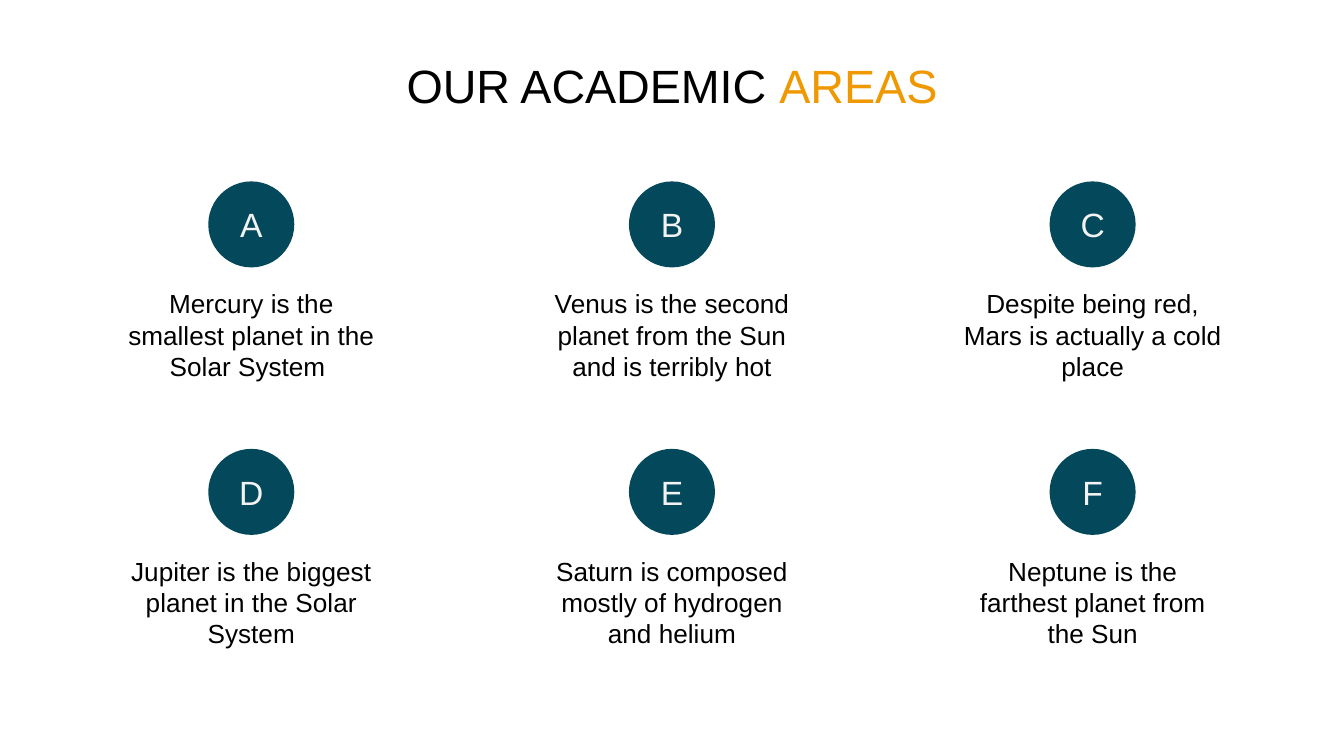
from dataclasses import dataclass

from pptx import Presentation
from pptx.dml.color import RGBColor
from pptx.enum.shapes import MSO_SHAPE as Shape
from pptx.enum.text import MSO_ANCHOR as Anchor, PP_ALIGN as Align
from pptx.util import Inches, Pt


@dataclass(frozen=True)
class Theme:
    font: str = "Arial"
    background: str = "FFFFFF"
    text: str = "000000"
    accent: str = "F09800"
    circle: str = "03485B"
    letter: str = "F3F3F3"
    title_size: int = 25
    letter_size: int = 18
    body_size: int = 14


THEME = Theme()

AREAS = [
    ("A", "Mercury is the smallest planet in the Solar System "),
    ("B", "Venus is the second planet from the Sun and is terribly hot"),
    ("C", "Despite being red, Mars is actually a cold place"),
    ("D", "Jupiter is the biggest planet in the Solar System"),
    ("E", "Saturn is composed mostly of hydrogen and helium"),
    ("F", "Neptune is the farthest planet from the Sun"),
]

# Slide and grid of areas, in inches
SLIDE_WIDTH = 10
SLIDE_HEIGHT = SLIDE_WIDTH * 9 / 16
COLUMNS = 3
FIRST_CENTER, COLUMN_STEP = 1.87, 3.13
FIRST_TOP, ROW_STEP = 1.35, 1.99
CIRCLE_SIZE = 0.64
TEXT_WIDTH = 2.15


def add_text(slide, left, top, width, height, parts, size, anchor=Anchor.TOP):
    """Add one centred paragraph made of (text, colour) parts."""
    box = slide.shapes.add_textbox(
        Inches(left), Inches(top), Inches(width), Inches(height))
    frame = box.text_frame
    frame.word_wrap = True
    frame.vertical_anchor = anchor
    frame.margin_left = frame.margin_right = Inches(0.1)
    frame.margin_top = frame.margin_bottom = Inches(0.1)
    paragraph = frame.paragraphs[0]
    paragraph.alignment = Align.CENTER
    for text, color in parts:
        run = paragraph.add_run()
        run.text = text
        run.font.name = THEME.font
        run.font.size = Pt(size)
        run.font.color.rgb = RGBColor.from_string(color)


def add_circle(slide, center, top):
    circle = slide.shapes.add_shape(
        Shape.OVAL, Inches(center - CIRCLE_SIZE / 2), Inches(top),
        Inches(CIRCLE_SIZE), Inches(CIRCLE_SIZE))
    circle.shadow.inherit = False
    circle.fill.solid()
    circle.fill.fore_color.rgb = RGBColor.from_string(THEME.circle)
    circle.line.fill.background()


def add_area(slide, center, top, letter, description):
    """Add a lettered circle with its description below."""
    left = center - TEXT_WIDTH / 2
    add_circle(slide, center, top)
    add_text(slide, left, top + 0.15, TEXT_WIDTH, 0.34,
             [(letter, THEME.letter)], THEME.letter_size, Anchor.MIDDLE)
    add_text(slide, left, top + 0.69, TEXT_WIDTH, 1.06,
             [(description, THEME.text)], THEME.body_size)


def main():
    presentation = Presentation()
    presentation.slide_width = Inches(SLIDE_WIDTH)
    presentation.slide_height = Inches(SLIDE_HEIGHT)
    slide = presentation.slides.add_slide(presentation.slide_layouts[6])

    # Background
    fill = slide.background.fill
    fill.solid()
    fill.fore_color.rgb = RGBColor.from_string(THEME.background)

    # Title
    add_text(slide, 1.3, 0.32, 7.4, 0.72,
             [("OUR ACADEMIC ", THEME.text), ("AREAS", THEME.accent)],
             THEME.title_size)

    # Academic areas
    for index, (letter, description) in enumerate(AREAS):
        row, column = divmod(index, COLUMNS)
        add_area(slide, FIRST_CENTER + column * COLUMN_STEP,
                 FIRST_TOP + row * ROW_STEP, letter, description)

    presentation.save("out.pptx")


if __name__ == "__main__":
    main()
